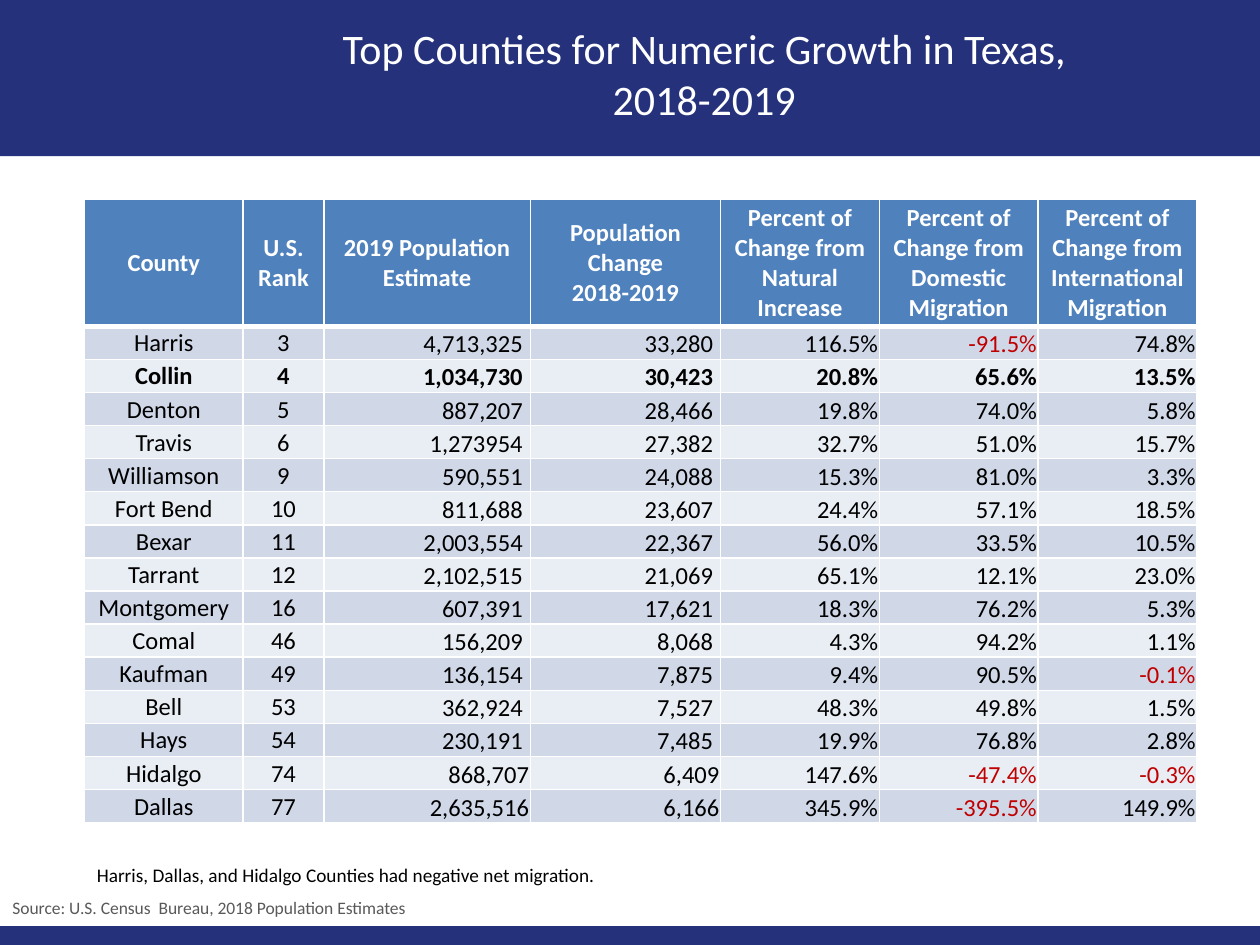
import dataclasses

import lxml.etree
import pptx
import pptx.dml.color
import pptx.enum.shapes
import pptx.enum.text
import pptx.oxml.ns
import pptx.util

ALIGN = pptx.enum.text.PP_ALIGN
ANCHOR = pptx.enum.text.MSO_ANCHOR
Inches = pptx.util.Inches


@dataclasses.dataclass(frozen=True)
class Theme:
    font: str = "Calibri"
    band: str = "25327B"
    header: str = "4F81BD"
    stripes: tuple = ("D0D8E8", "E9EDF4")
    white: str = "FFFFFF"
    black: str = "000000"
    negative: str = "C00000"
    muted: str = "595959"
    title_size: int = 24
    table_size: int = 14
    note_size: int = 11
    source_size: int = 10


THEME = Theme()
WIDTH, HEIGHT = 10, 7.5
TABLE_LEFT, TABLE_TOP = 0.67, 1.58
COLUMN_WIDTHS = (1.26, 0.64, 1.64, 1.51, 1.26, 1.26, 1.26)
HEADER_HEIGHT, BODY_HEIGHT = 1.01, 3.94
CELL_INSET, NUMBER_INSET = 0.01, 0.06
RULE, HEADER_RULE = 1, 3

HEADERS = (
    "County", "U.S. Rank", "2019 Population Estimate",
    "Population Change\n2018-2019",
    "Percent of Change from Natural Increase",
    "Percent of Change from Domestic Migration",
    "Percent of Change from International Migration",
)
COUNTIES = (
    ("Harris", "3", "4,713,325", "33,280", "116.5%", "-91.5%", "74.8%"),
    ("Collin", "4", "1,034,730", "30,423", "20.8%", "65.6%", "13.5%"),
    ("Denton", "5", "887,207", "28,466", "19.8%", "74.0%", "5.8%"),
    ("Travis", "6", "1,273954", "27,382", "32.7%", "51.0%", "15.7%"),
    ("Williamson", "9", "590,551", "24,088", "15.3%", "81.0%", "3.3%"),
    ("Fort Bend", "10", "811,688", "23,607", "24.4%", "57.1%", "18.5%"),
    ("Bexar", "11", "2,003,554", "22,367", "56.0%", "33.5%", "10.5%"),
    ("Tarrant", "12", "2,102,515", "21,069", "65.1%", "12.1%", "23.0%"),
    ("Montgomery", "16", "607,391", "17,621", "18.3%", "76.2%", "5.3%"),
    ("Comal", "46", "156,209", "8,068", "4.3%", "94.2%", "1.1%"),
    ("Kaufman", "49", "136,154", "7,875", "9.4%", "90.5%", "-0.1%"),
    ("Bell", "53", "362,924", "7,527", "48.3%", "49.8%", "1.5%"),
    ("Hays", "54", "230,191", "7,485", "19.9%", "76.8%", "2.8%"),
    ("Hidalgo", "74", "868,707", "6,409", "147.6%", "-47.4%", "-0.3%"),
    ("Dallas", "77", "2,635,516", "6,166", "345.9%", "-395.5%", "149.9%"),
)
HIGHLIGHTED = "Collin"
FLUSH_COUNTIES = ("Hidalgo", "Dallas")


def rgb(value):
    return pptx.dml.color.RGBColor.from_string(value)


def write_text(tf, text, size, color, bold=False, align=ALIGN.LEFT):
    for i, line in enumerate(text.split("\n")):
        p = tf.add_paragraph() if i else tf.paragraphs[0]
        p.alignment = align
        r = p.add_run()
        r.text = line
        r.font.name = THEME.font
        r.font.size = pptx.util.Pt(size)
        r.font.bold = bold
        r.font.color.rgb = rgb(color)


def add_band(s, top, height):
    sp = s.shapes.add_shape(pptx.enum.shapes.MSO_SHAPE.RECTANGLE, 0, Inches(top),
                            Inches(WIDTH), Inches(height))
    sp.shadow.inherit = False
    sp.fill.solid()
    sp.fill.fore_color.rgb = rgb(THEME.band)
    sp.line.fill.background()
    s.shapes.title.element.addprevious(sp.element)


def place_title(s, text, left, top, width, height):
    sp = s.shapes.title
    sp.left, sp.top, sp.width, sp.height = map(Inches, (left, top, width, height))
    sp.text_frame.auto_size = pptx.enum.text.MSO_AUTO_SIZE.NONE
    sp.text_frame.vertical_anchor = ANCHOR.TOP
    write_text(sp.text_frame, text, THEME.title_size, THEME.white, align=ALIGN.CENTER)


def add_note(s, text, left, top, width, height, size, color):
    sp = s.shapes.add_textbox(*map(Inches, (left, top, width, height)))
    sp.text_frame.word_wrap = True
    write_text(sp.text_frame, text, size, color)
    return sp.text_frame.paragraphs[0]


def set_borders(cell, top, bottom):
    """Draw white rules; a cell's border lines must come before its fill."""
    tc_pr = cell._tc.get_or_add_tcPr()
    sides = (("lnL", RULE), ("lnR", RULE), ("lnT", top), ("lnB", bottom))
    for i, (side, width) in enumerate(sides):
        ln = lxml.etree.Element(pptx.oxml.ns.qn(f"a:{side}"), w=str(pptx.util.Pt(width)))
        fill = lxml.etree.SubElement(ln, pptx.oxml.ns.qn("a:solidFill"))
        lxml.etree.SubElement(fill, pptx.oxml.ns.qn("a:srgbClr"), val=THEME.white)
        tc_pr.insert(i, ln)


def fill_cell(cell, text, fill, color, bold, align, anchor, right_inset=CELL_INSET):
    cell.fill.solid()
    cell.fill.fore_color.rgb = rgb(fill)
    cell.margin_left = cell.margin_top = Inches(CELL_INSET)
    cell.margin_right = Inches(right_inset)
    cell.margin_bottom = 0
    cell.vertical_anchor = anchor
    write_text(cell.text_frame, text, THEME.table_size, color, bold, align)


def fill_county_row(table, row, values):
    county = values[0]
    for col, text in enumerate(values):
        numeric = col >= 2
        counted = col in (2, 3) and county not in FLUSH_COUNTIES
        cell = table.cell(row, col)
        fill_cell(cell, text, THEME.stripes[(row - 1) % 2],
                  THEME.negative if text.startswith("-") else THEME.black,
                  county == HIGHLIGHTED,
                  ALIGN.RIGHT if numeric else ALIGN.CENTER,
                  ANCHOR.BOTTOM if numeric else ANCHOR.MIDDLE,
                  NUMBER_INSET if counted else CELL_INSET)
        set_borders(cell, HEADER_RULE if row == 1 else RULE, RULE)


def add_county_table(s):
    frame = s.shapes.add_table(len(COUNTIES) + 1, len(HEADERS), Inches(TABLE_LEFT),
                               Inches(TABLE_TOP), Inches(sum(COLUMN_WIDTHS)),
                               Inches(HEADER_HEIGHT + BODY_HEIGHT))
    table = frame.table
    for column, width in zip(table.columns, COLUMN_WIDTHS):
        column.width = Inches(width)
    for i, row in enumerate(table.rows):
        row.height = Inches(BODY_HEIGHT / len(COUNTIES) if i else HEADER_HEIGHT)
    for col, text in enumerate(HEADERS):
        cell = table.cell(0, col)
        fill_cell(cell, text, THEME.header, THEME.white, True, ALIGN.CENTER, ANCHOR.MIDDLE)
        set_borders(cell, RULE, HEADER_RULE)
    for row, values in enumerate(COUNTIES, start=1):
        fill_county_row(table, row, values)


def main():
    prs = pptx.Presentation()
    prs.slide_width, prs.slide_height = Inches(WIDTH), Inches(HEIGHT)
    s = prs.slides.add_slide(prs.slide_layouts.get_by_name("Title Only"))
    add_band(s, 0, 1.24)
    add_band(s, HEIGHT - 0.15, 0.15)
    add_county_table(s)
    place_title(s, "Top Counties for Numeric Growth in Texas, 2018-2019",
                2.58, 0.13, 6.02, 0.91)
    add_note(s, "Harris, Dallas, and Hidalgo Counties had negative net migration.",
             TABLE_LEFT, 6.8, 6.83, 0.29, THEME.note_size, THEME.black)
    p = add_note(s, "Source: U.S. Census  Bureau, 2018 Population Estimates",
                 0, 7.06, WIDTH / 2, 0.28, THEME.source_size, THEME.muted)
    p.line_spacing = 1.07
    prs.save("out.pptx")


if __name__ == "__main__":
    main()
